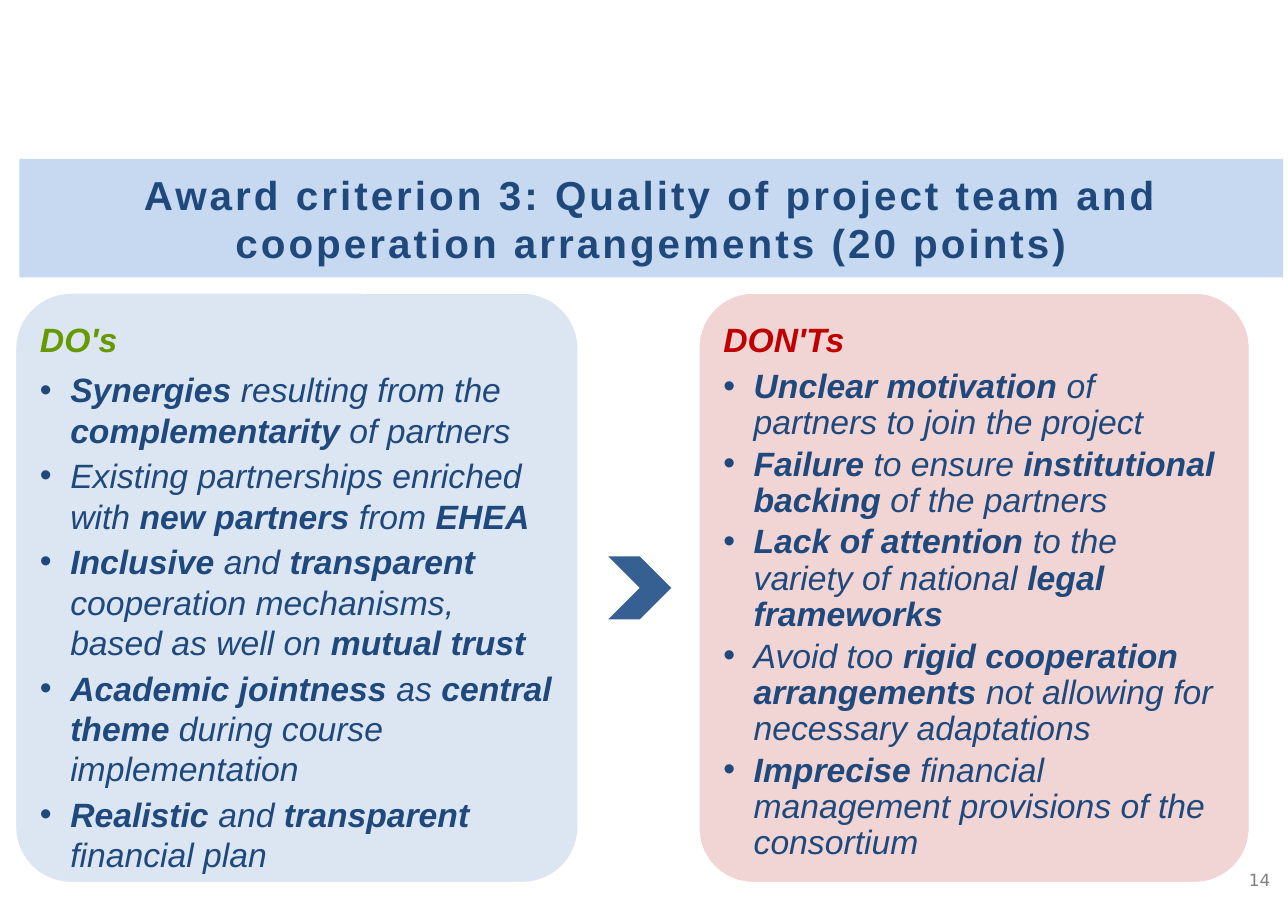
"""Build the award criterion 3 slide with its DO's and DON'Ts panels."""
from lxml import etree
from pptx import Presentation
from pptx.dml.color import RGBColor
from pptx.enum.shapes import MSO_SHAPE
from pptx.enum.text import MSO_ANCHOR, PP_ALIGN
from pptx.oxml.ns import qn
from pptx.util import Inches, Pt

ROUNDED, CHEVRON = MSO_SHAPE.ROUNDED_RECTANGLE, MSO_SHAPE.CHEVRON
TOP, MIDDLE = MSO_ANCHOR.TOP, MSO_ANCHOR.MIDDLE
LEFT, CENTER = PP_ALIGN.LEFT, PP_ALIGN.CENTER
COLORS = {
    "navy": "1F497D", "banner": "C6D9F1", "chevron": "376092",
    "do_panel": "DCE6F2", "dont_panel": "E6B9B8",
    "do": "669900", "dont": "C00000", "white": "FFFFFF", "gray": "808080",
}


def write(paragraph, text, size=20, color="navy", font="Arial", italic=False,
          align=LEFT, after=0, line=1.0, bullet=False, tracking=0):
    """Write text into a paragraph; words between asterisks are bold."""
    if bullet:
        properties = paragraph._p.get_or_add_pPr()
        properties.set("marL", str(Inches(0.25)))
        properties.set("indent", str(-Inches(0.25)))
        etree.SubElement(properties, qn("a:buFont")).set("typeface", "Arial")
        etree.SubElement(properties, qn("a:buChar")).set("char", "•")
    paragraph.alignment = align
    paragraph.space_before, paragraph.space_after = Pt(0), Pt(after)
    paragraph.line_spacing = line
    for index, part in enumerate(text.split("*")):
        if part:
            run = paragraph.add_run()
            run.text = part
            run.font.name, run.font.size = font, Pt(size)
            run.font.bold, run.font.italic = index % 2 == 1, italic
            run.font.color.rgb = RGBColor.from_string(COLORS[color])
            if tracking:
                run._r.get_or_add_rPr().set("spc", str(tracking))


def prepare(frame, anchor=TOP, side=0.08, edge=0.08):
    """Set the wrap, anchor and margins of a text frame."""
    frame.word_wrap, frame.vertical_anchor = True, anchor
    frame.margin_left = frame.margin_right = Inches(side)
    frame.margin_top = frame.margin_bottom = Inches(edge)
    return frame


prs = Presentation()
prs.slide_width, prs.slide_height = Inches(10.63), Inches(7.5)
slide = prs.slides.add_slide(prs.slide_layouts[5])
shapes = slide.shapes

banner = shapes.title
banner.left, banner.top = Inches(0.16), Inches(1.31)
banner.width, banner.height = Inches(10.43), Inches(0.98)
outline = etree.SubElement(banner._element.spPr, qn("a:prstGeom"), prst="roundRect")
etree.SubElement(outline, qn("a:avLst"))
banner.fill.solid()
banner.fill.fore_color.rgb = RGBColor.from_string(COLORS["banner"])
write(prepare(banner.text_frame, MIDDLE, edge=0.04).paragraphs[0],
      "*Award criterion 3: Quality of project team and cooperation arrangements (20 points)*",
      size=24, align=CENTER, tracking=180)

panels = [
    (0.12, 4.66, "do_panel", 100, "*DO's*", "do", 1.0, [
        "*Synergies* resulting from the *complementarity* of partners",
        "Existing partnerships enriched with *new partners* from *EHEA*",
        "*Inclusive *and *transparent* cooperation mechanisms, based as well on *mutual trust*",
        "*Academic jointness* as *central theme *during course implementation",
        "*Realistic* and *transparent* financial plan",
    ]),
    (5.76, 4.56, "dont_panel", 60, "*DON'Ts*", "dont", 0.9, [
        "*Unclear motivation* of partners to join the project",
        "*Failure* to ensure *institutional backing* of the partners",
        "*Lack of attention *to the variety of national *legal frameworks*",
        "Avoid too *rigid cooperation arrangements *not allowing for necessary adaptations",
        "*Imprecise* financial management provisions of the consortium",
    ]),
]
for left, width, fill, opacity, heading, heading_color, line, advice in panels:
    panel = shapes.add_shape(ROUNDED, Inches(left), Inches(2.41), Inches(width), Inches(4.88))
    panel.shadow.inherit = False
    panel.adjustments[0] = 0.1
    panel.fill.solid()
    panel.fill.fore_color.rgb = RGBColor.from_string(COLORS[fill])
    if opacity < 100:
        tint = panel._element.spPr.find(qn("a:solidFill")).find(qn("a:srgbClr"))
        etree.SubElement(tint, qn("a:alpha")).set("val", str(opacity * 1000))
    panel.line.color.rgb = RGBColor.from_string(COLORS["white"])
    panel.line.width = Pt(2)

    advice_box = shapes.add_textbox(Inches(left + 0.13), Inches(2.55),
                                    Inches(width - 0.27), Inches(4.61))
    frame = prepare(advice_box.text_frame)
    write(frame.paragraphs[0], heading, color=heading_color, italic=True, after=6)
    for item in advice:
        write(frame.add_paragraph(), item, italic=True, after=3, line=line, bullet=True)

chevron = shapes.add_shape(CHEVRON, Inches(5.02), Inches(4.59), Inches(0.52), Inches(0.52))
chevron.shadow.inherit = False
chevron.fill.solid()
chevron.fill.fore_color.rgb = RGBColor.from_string(COLORS["chevron"])
chevron.line.fill.background()

page_number = shapes.add_textbox(Inches(10.15), Inches(7.03), Inches(0.49), Inches(0.46))
write(prepare(page_number.text_frame, MIDDLE).paragraphs[0], "14",
      size=10, color="gray", font="DejaVu Sans", align=CENTER)

prs.save("out.pptx")
